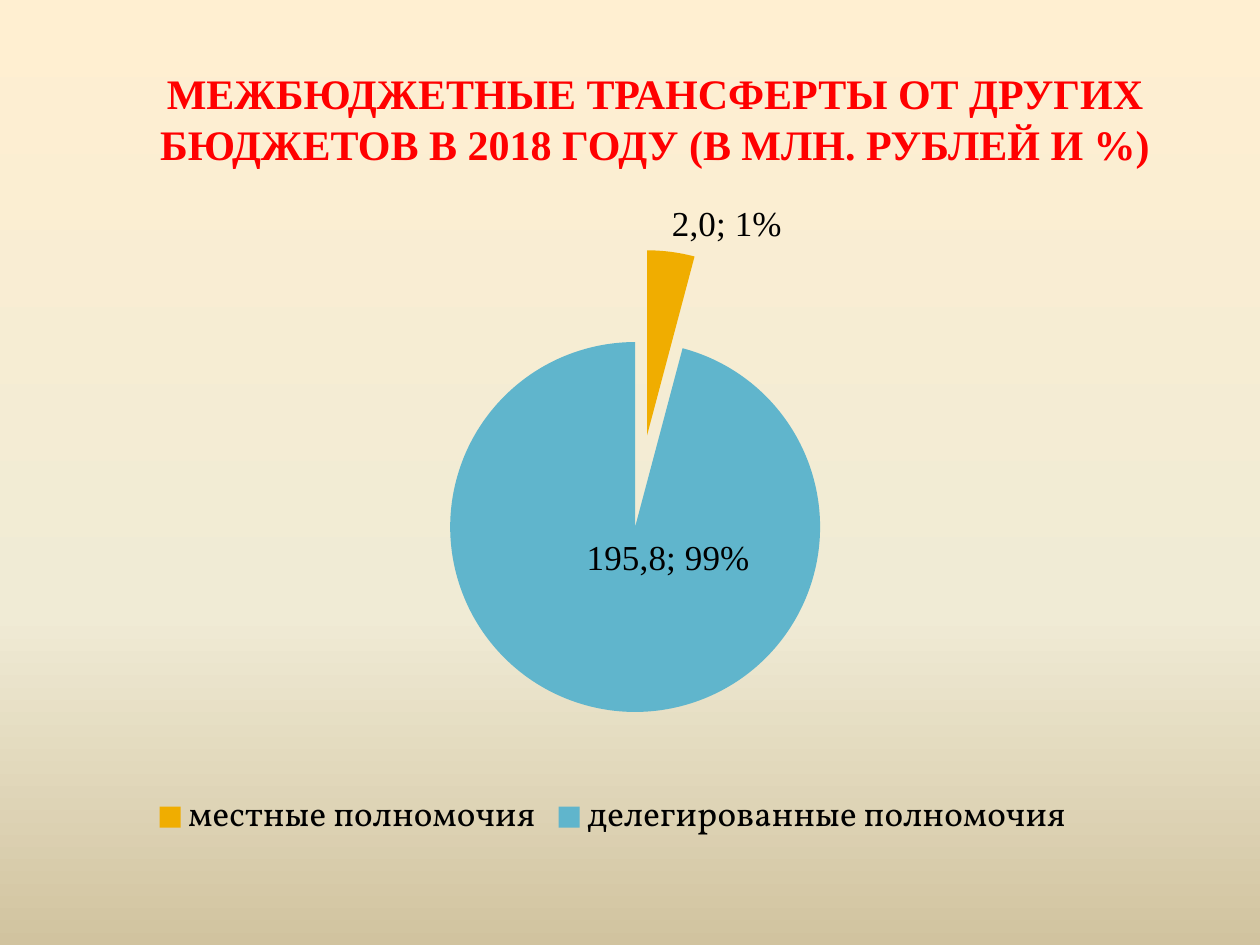
from typing import NamedTuple, Optional

from pptx import Presentation
from pptx.chart.data import CategoryChartData
from pptx.dml.color import RGBColor
from pptx.enum.chart import XL_CHART_TYPE as Kind
from pptx.enum.chart import XL_LABEL_POSITION as Spot
from pptx.enum.chart import XL_LEGEND_POSITION as Side
from pptx.enum.text import MSO_ANCHOR, PP_ALIGN
from pptx.oxml import parse_xml
from pptx.oxml.ns import nsdecls
from pptx.util import Pt

RED = RGBColor(0xFF, 0x00, 0x00)
BLACK = RGBColor(0x00, 0x00, 0x00)
GOLD = RGBColor(0xF0, 0xAD, 0x00)
BLUE = RGBColor(0x60, 0xB5, 0xCC)
CREAM = RGBColor(0xFF, 0xEF, 0xD1)
IVORY = RGBColor(0xF0, 0xEB, 0xD5)
SAND = RGBColor(0xD1, 0xC3, 0x9F)
STOPS = ((0, CREAM), (65, IVORY), (100, SAND))

SERIF = "Times New Roman"
BODY = "Vollkorn"


class Slice(NamedTuple):
    name: str
    value: float
    label: str
    color: RGBColor
    spot: Spot
    shift: Optional[tuple[float, float]] = None


SLICES = (
    Slice("местные полномочия", 7.4, "2,0; 1%", GOLD, Spot.OUTSIDE_END),
    Slice("делегированные полномочия", 171.7, "195,8; 99%", BLUE, Spot.CENTER, (0.04, -0.09)),
)


def style(font, size: float, name: str, color: RGBColor, bold: bool = False) -> None:
    font.size = Pt(size)
    font.name = name
    font.color.rgb = color
    font.bold = bold


def layout(**parts: object):
    """Make a manual chart layout from its parts, given in schema order."""
    body = "".join(f'<c:{key} val="{val}"/>' for key, val in parts.items())
    return parse_xml(
        f'<c:layout {nsdecls("c")}><c:manualLayout>{body}</c:manualLayout></c:layout>')


def shade(slide) -> None:
    """Fill the background with a gradient from top to bottom."""
    stops = "".join(
        f'<a:gs pos="{pos * 1000}"><a:srgbClr val="{color}"/></a:gs>'
        for pos, color in STOPS)
    slide.element.cSld.insert(0, parse_xml(
        f'<p:bg {nsdecls("p", "a")}><p:bgPr><a:gradFill><a:gsLst>{stops}</a:gsLst>'
        '<a:lin ang="5400000" scaled="0"/></a:gradFill><a:effectLst/></p:bgPr></p:bg>'))


def add_title(slide, text: str) -> None:
    title = slide.shapes.title
    title.left, title.top, title.width, title.height = Pt(50.4), Pt(22.6), Pt(648), Pt(90)
    frame = title.text_frame
    frame.text = text
    frame.word_wrap = True
    frame.vertical_anchor = MSO_ANCHOR.MIDDLE
    para = frame.paragraphs[0]
    para.alignment = PP_ALIGN.CENTER
    style(para.font, 24, SERIF, RED, bold=True)


def paint(point, part: Slice) -> None:
    """Colour one slice and write its label."""
    fill = point.format.fill
    fill.solid()
    fill.fore_color.rgb = part.color
    label = point.data_label
    frame = label.text_frame
    frame.text = part.label
    style(frame.paragraphs[0].font, 20, SERIF, BLACK)
    label.position = part.spot
    node = frame._txBody.getparent().getparent()
    node.find("{*}showPercent").set("val", "1")
    if part.shift:
        x, y = part.shift
        node.find("{*}idx").addnext(layout(x=x, y=y))


def add_pie(slide) -> None:
    data = CategoryChartData(number_format="0.0")
    data.categories = [part.name for part in SLICES]
    data.add_series("Series 1", [part.value for part in SLICES])
    chart = slide.shapes.add_chart(
        Kind.PIE, Pt(28), Pt(106.5), Pt(644.5), Pt(378.7), data).chart
    chart.has_title = False
    style(chart.font, 10, BODY, BLACK)

    chart.has_legend = True
    legend = chart.legend
    legend.position = Side.BOTTOM
    legend.include_in_layout = False
    style(legend.font, 20, BODY, BLACK)

    plot = chart.plots[0]
    plot.vary_by_categories = True
    series = plot.series[0]
    for i, part in enumerate(SLICES):
        paint(series.points[i], part)
    labels = series.data_labels
    labels.show_value = labels.show_percentage = True
    style(labels.font, 20, SERIF, BLACK)
    burst = parse_xml(f'<c:explosion {nsdecls("c")} val="25"/>')
    series._element.find("{*}dPt").addprevious(burst)

    area = chart._chartSpace.chart.plotArea
    for old in area.findall("{*}layout"):
        area.remove(old)
    area.insert(0, layout(layoutTarget="inner", xMode="edge", yMode="edge",
                          x=0.32, y=0.09, w=0.41, h=0.71))


def main() -> None:
    deck = Presentation()
    deck.slide_width, deck.slide_height = Pt(720), Pt(540)
    slide = deck.slides.add_slide(deck.slide_layouts[5])
    shade(slide)
    add_title(slide, "МЕЖБЮДЖЕТНЫЕ ТРАНСФЕРТЫ ОТ ДРУГИХ БЮДЖЕТОВ "
                     "В 2018 ГОДУ (В МЛН. РУБЛЕЙ И %)")
    add_pie(slide)
    deck.save("out.pptx")


if __name__ == "__main__":
    main()
